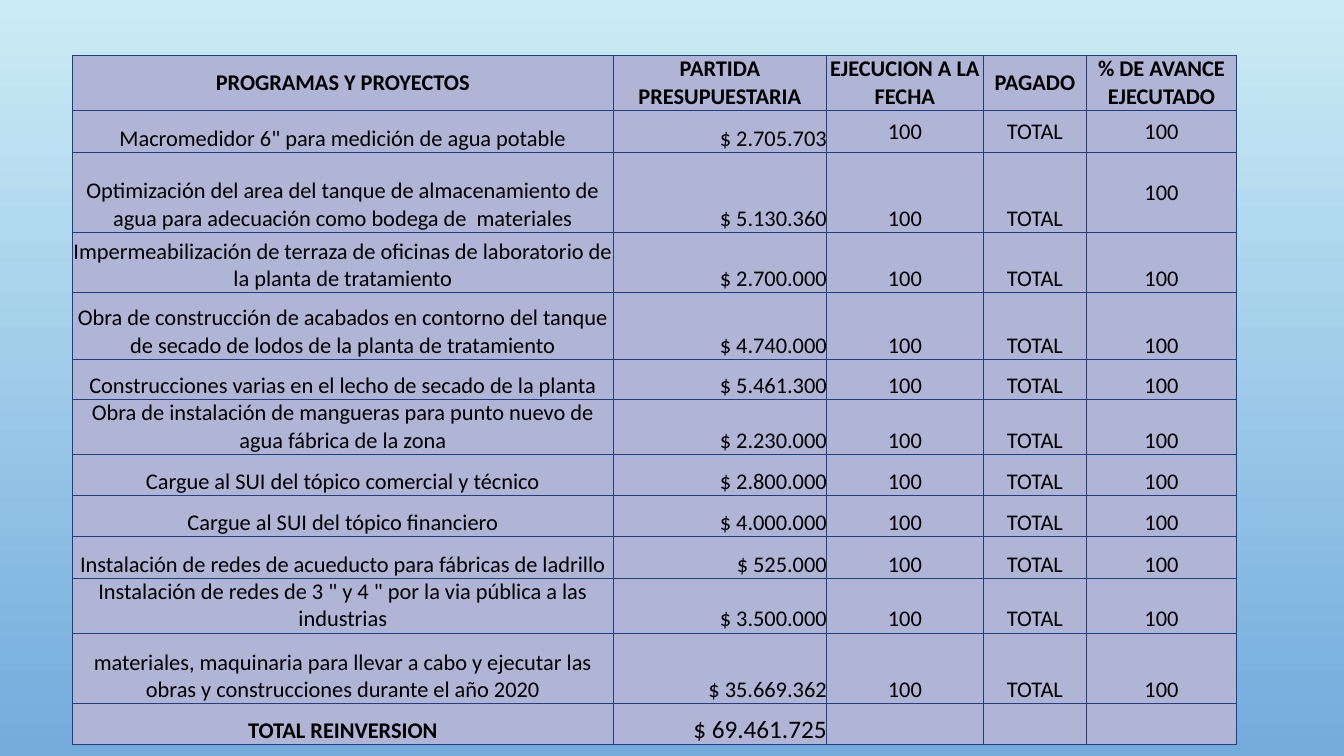
from dataclasses import dataclass

from lxml import etree
from pptx import Presentation, util as u
from pptx.dml.color import RGBColor
from pptx.enum import text
from pptx.oxml import ns

MIDDLE, BOTTOM = text.MSO_ANCHOR.MIDDLE, text.MSO_ANCHOR.BOTTOM
CENTER, RIGHT = text.PP_ALIGN.CENTER, text.PP_ALIGN.RIGHT


@dataclass(frozen=True)
class Theme:
    font: str = "Calibri"
    body: float = 16
    total: float = 18
    border_width: float = 0.75
    ink: str = "000000"
    cell: str = "B0B4D5"
    border: str = "1F3F83"
    sky_top: str = "CBECF5"
    sky_bottom: str = "73ABDD"


@dataclass(frozen=True)
class Project:
    name: str
    budget: str
    height: float
    progress_anchors: tuple = (BOTTOM, BOTTOM, BOTTOM)


THEME = Theme()
SLIDE_WIDTH, SLIDE_HEIGHT = 13.33, 7.5
TABLE_LEFT, TABLE_TOP = 0.72, 0.55
COLUMNS = (5.36, 2.12, 1.55, 1.03, 1.48)
HEADER_HEIGHT, TOTAL_HEIGHT = 0.42, 0.41
HEADINGS = ("PROGRAMAS Y PROYECTOS", "PARTIDA PRESUPUESTARIA",
            "EJECUCION A LA FECHA", "PAGADO", "% DE AVANCE EJECUTADO")
PROGRESS = ("100", "TOTAL", "100")
PROJECTS = (
    Project('Macromedidor 6" para medición de agua potable',
            "$ 2.705.703", 0.42, (MIDDLE, MIDDLE, MIDDLE)),
    Project("Optimización del area del tanque de almacenamiento de agua "
            "para adecuación como bodega de  materiales",
            "$ 5.130.360", 0.79, (BOTTOM, BOTTOM, MIDDLE)),
    Project("Impermeabilización de terraza de oficinas de laboratorio de "
            "la planta de tratamiento", "$ 2.700.000", 0.6),
    Project("Obra de construcción de acabados en contorno del tanque de "
            "secado de lodos de la planta de tratamiento", "$ 4.740.000", 0.66),
    Project("Construcciones varias en el lecho de secado de la planta",
            "$ 5.461.300", 0.4),
    Project("Obra de instalación de mangueras para punto nuevo de agua "
            "fábrica de la zona", "$ 2.230.000", 0.41),
    Project("Cargue al SUI del tópico comercial y técnico", "$ 2.800.000", 0.41),
    Project("Cargue al SUI del tópico financiero", "$ 4.000.000", 0.41),
    Project("Instalación de redes de acueducto para fábricas de ladrillo",
            "$ 525.000", 0.41),
    Project('Instalación de redes de 3 " y 4 " por la via pública a las '
            "industrias", "$ 3.500.000", 0.41),
    Project("materiales, maquinaria para llevar a cabo y ejecutar las obras "
            "y construcciones durante el año 2020", "$ 35.669.362", 0.7),
)


def paint_background(slide) -> None:
    sky = slide.background.fill
    sky.gradient()
    sky.gradient_angle = 270
    for stop, color in zip(sky.gradient_stops, (THEME.sky_top, THEME.sky_bottom)):
        stop.color.rgb = RGBColor.from_string(color)


def add_borders(cell) -> None:
    properties = cell._tc.get_or_add_tcPr()
    for position, side in enumerate(("lnL", "lnR", "lnT", "lnB")):
        line = etree.Element(ns.qn(f"a:{side}"), w=str(u.Pt(THEME.border_width)))
        fill = etree.SubElement(line, ns.qn("a:solidFill"))
        etree.SubElement(fill, ns.qn("a:srgbClr"), val=THEME.border)
        properties.insert(position, line)


def fill_cell(cell, wording: str, anchor=BOTTOM, align=CENTER,
              bold: bool = False, size: float = THEME.body) -> None:
    cell.margin_left = cell.margin_right = cell.margin_top = cell.margin_bottom = 0
    cell.vertical_anchor = anchor
    cell.fill.solid()
    cell.fill.fore_color.rgb = RGBColor.from_string(THEME.cell)
    add_borders(cell)
    cell.text = wording
    paragraph = cell.text_frame.paragraphs[0]
    paragraph.alignment = align
    paragraph.font.name = THEME.font
    paragraph.font.size = u.Pt(size)
    paragraph.font.bold = bold
    paragraph.font.color.rgb = RGBColor.from_string(THEME.ink)


def add_budget_table(slide) -> None:
    heights = (HEADER_HEIGHT, *(project.height for project in PROJECTS), TOTAL_HEIGHT)
    budget = slide.shapes.add_table(
        len(heights), len(COLUMNS), u.Inches(TABLE_LEFT), u.Inches(TABLE_TOP),
        u.Inches(sum(COLUMNS)), u.Inches(sum(heights))).table
    budget.first_row = budget.horz_banding = False
    for column, width in zip(budget.columns, COLUMNS):
        column.width = u.Inches(width)
    for row, height in zip(budget.rows, heights):
        row.height = u.Inches(height)

    for column, heading in enumerate(HEADINGS):
        fill_cell(budget.cell(0, column), heading, anchor=MIDDLE, bold=True)
    for row, project in enumerate(PROJECTS, start=1):
        fill_cell(budget.cell(row, 0), project.name)
        fill_cell(budget.cell(row, 1), project.budget, align=RIGHT)
        for column, (value, anchor) in enumerate(
                zip(PROGRESS, project.progress_anchors), start=2):
            fill_cell(budget.cell(row, column), value, anchor=anchor)
    last = len(heights) - 1
    fill_cell(budget.cell(last, 0), "TOTAL REINVERSION", bold=True)
    fill_cell(budget.cell(last, 1), "$ 69.461.725", align=RIGHT, size=THEME.total)
    for column in range(2, len(COLUMNS)):
        fill_cell(budget.cell(last, column), "")


def main() -> None:
    deck = Presentation()
    deck.slide_width = u.Inches(SLIDE_WIDTH)
    deck.slide_height = u.Inches(SLIDE_HEIGHT)
    slide = deck.slides.add_slide(deck.slide_layouts[6])
    paint_background(slide)
    add_budget_table(slide)
    deck.save("out.pptx")


if __name__ == "__main__":
    main()
